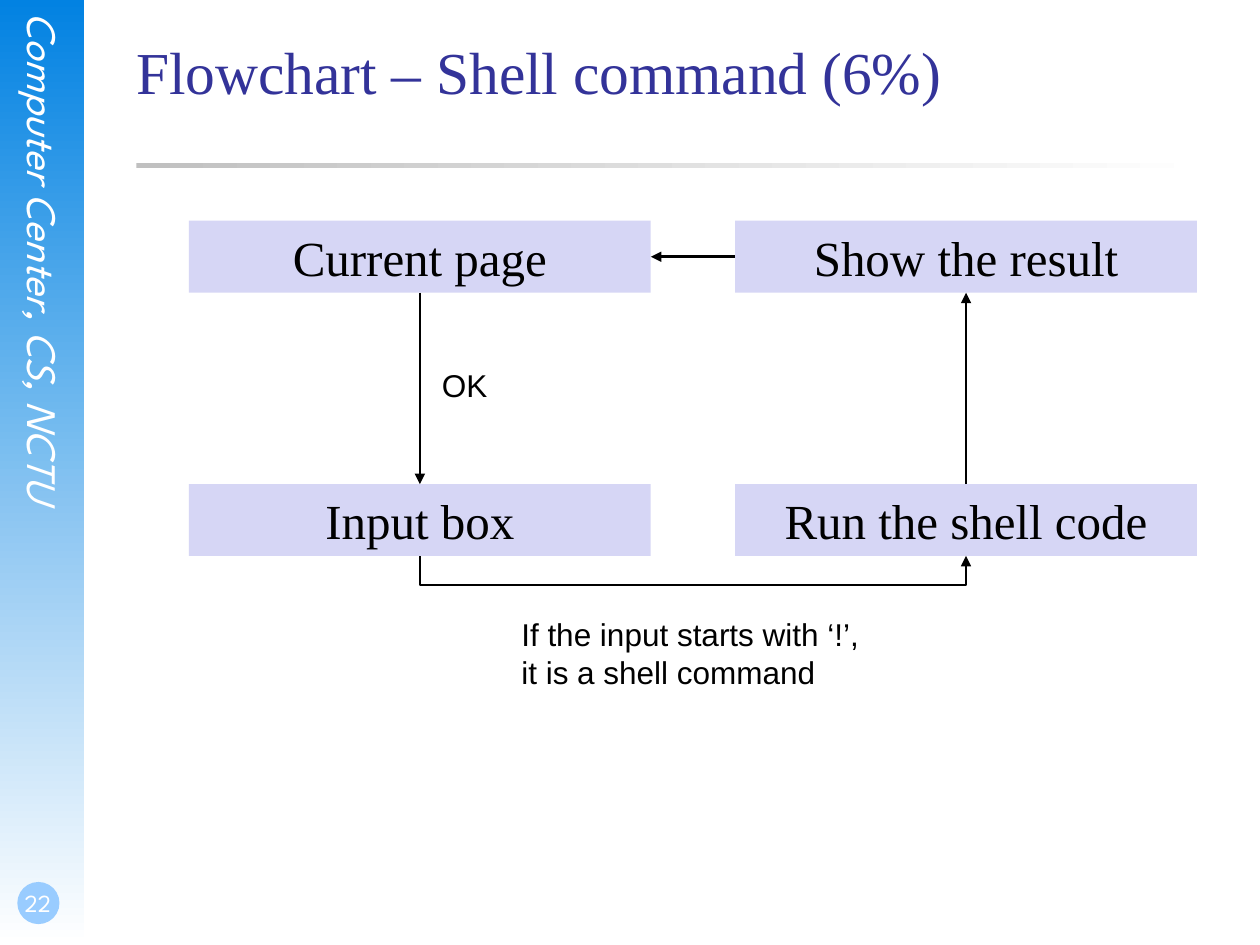
from lxml import etree
from pptx import Presentation
from pptx import util as u
from pptx.dml.color import RGBColor
from pptx.enum import shapes, text
from pptx.oxml.ns import qn

WHITE = RGBColor(0xFF, 0xFF, 0xFF)
BLACK = RGBColor(0, 0, 0)
BLUE = RGBColor(0x02, 0x82, 0xE2)
SKY = RGBColor(0x99, 0xCC, 0xFF)
GREY = RGBColor(0xC0, 0xC0, 0xC0)
NAVY = RGBColor(0x33, 0x33, 0x99)
LILAC = RGBColor(0xD6, 0xD6, 0xF5)

SERIF, SANS, SIDE = "Times New Roman", "Arial", "League Spartan"
COLUMNS = (3.81, 14.82)
ROWS = (4.45, 9.76)
BOX_W, BOX_H = 9.31, 1.45
TOP, LEFT, BOTTOM, RIGHT = range(4)  # connection sites of a rectangle


def cm(*lengths):
    return [u.Cm(n) for n in lengths]


def write(tf, words, size, font, color, align=text.PP_ALIGN.LEFT, italic=False):
    p = tf.paragraphs[0]
    p.alignment = align
    r = p.add_run()
    r.text = words
    r.font.size = u.Pt(size)
    r.font.name = font
    r.font.italic = italic
    r.font.color.rgb = color


def set_insets(tf, left=0, top=0, right=0, bottom=0):
    tf.margin_left, tf.margin_top, tf.margin_right, tf.margin_bottom = cm(
        left, top, right, bottom)


def add_plain(s, kind, at, color):
    sp = s.shapes.add_shape(kind, *cm(*at))
    sp.shadow.inherit = False
    sp.line.fill.background()
    sp.fill.solid()
    sp.fill.fore_color.rgb = color
    return sp


def add_gradient(s, at, color, angle):
    """Add a bar that fades from color to white."""
    sp = add_plain(s, shapes.MSO_SHAPE.RECTANGLE, at, color)
    sp.fill.gradient()
    sp.fill.gradient_angle = angle
    for stop, rgb, place in zip(sp.fill.gradient_stops, (color, WHITE), (0, 1)):
        stop.color.rgb = rgb
        stop.position = place


def add_label(s, at, words, size, font, color, wrap=True, **style):
    tf = s.shapes.add_textbox(*cm(*at)).text_frame
    tf.word_wrap = wrap
    write(tf, words, size, font, color, **style)
    return tf


def add_step(s, column, row, words):
    at = COLUMNS[column], ROWS[row], BOX_W, BOX_H
    sp = add_plain(s, shapes.MSO_SHAPE.RECTANGLE, at, LILAC)
    tf = sp.text_frame
    tf.vertical_anchor = text.MSO_ANCHOR.MIDDLE
    write(tf, words, 28, SERIF, BLACK, text.PP_ALIGN.CENTER)
    return sp


def add_arrow(s, start, start_site, end, end_site,
              kind=shapes.MSO_CONNECTOR.STRAIGHT):
    c = s.shapes.add_connector(kind, 0, 0, 0, 0)
    c.begin_connect(start, start_site)
    c.end_connect(end, end_site)
    c.line.color.rgb = BLACK
    c.line.width = u.Pt(1.5)
    etree.SubElement(c.line._get_or_add_ln(), qn("a:tailEnd"), type="triangle")
    etree.SubElement(c._element.spPr, qn("a:effectLst"))
    return c


def add_loop_below(s, start, end, drop):
    """Join two bottom edges by a turned elbow that dips by drop."""
    c = add_arrow(s, start, BOTTOM, end, BOTTOM, shapes.MSO_CONNECTOR.ELBOW)
    span, depth = end.left - start.left, 1588
    middle = start.left + start.width // 2 + span // 2
    c.left, c.top = middle - depth // 2, start.top + start.height - span // 2
    c.width, c.height = depth, span
    xfrm = c._element.spPr.find(qn("a:xfrm"))
    for name, value in (("rot", "5400000"), ("flipH", "1"), ("flipV", "1")):
        xfrm.set(name, value)
    guides = c._element.spPr.find(qn("a:prstGeom")).get_or_add_avLst()
    etree.SubElement(guides, qn("a:gd"), name="adj1",
                     fmla=f"val {-round(drop / depth * 100000)}")


def add_frame(s):
    add_gradient(s, (0, 0, 1.7, 19.05), BLUE, 270)
    tf = add_label(s, (0.38, 0.25, 1.02, 12.98), "Computer Center, CS, NCTU",
                   24, SIDE, WHITE, italic=True)
    set_insets(tf)
    tf._txBody.bodyPr.set("vert", "eaVert")
    add_plain(s, shapes.MSO_SHAPE.OVAL, (0.35, 17.78, 0.85, 0.85), SKY)
    tf = add_label(s, (0, 17.35, 1.48, 1.27), "22", 14, SIDE, WHITE,
                   align=text.PP_ALIGN.CENTER)
    set_insets(tf, left=0.05, bottom=0.13)
    tf.vertical_anchor = text.MSO_ANCHOR.BOTTOM
    add_gradient(s, (2.75, 3.28, 21.59, 0.1), GREY, 0)


def set_title(s, words):
    sp = s.shapes.title
    sp.left, sp.top, sp.width, sp.height = cm(2.75, 0.71, 21.59, 3.18)
    tf = sp.text_frame
    set_insets(tf)
    tf.vertical_anchor = text.MSO_ANCHOR.TOP
    write(tf, words, 34, SERIF, NAVY)


def main():
    prs = Presentation()
    prs.slide_width, prs.slide_height = cm(25.4, 19.05)
    s = prs.slides.add_slide(prs.slide_layouts[5])
    add_frame(s)
    set_title(s, "Flowchart – Shell command (6%)")

    page = add_step(s, 0, 0, "Current page")
    entry = add_step(s, 0, 1, "Input box")
    code = add_step(s, 1, 1, "Run the shell code")
    result = add_step(s, 1, 0, "Show the result")

    add_arrow(s, page, BOTTOM, entry, TOP)
    add_loop_below(s, entry, code, u.Cm(0.64))
    add_arrow(s, code, TOP, result, BOTTOM)
    add_arrow(s, result, LEFT, page, RIGHT)

    add_label(s, (8.66, 7.26, 1.45, 1.02), "OK", 18, SANS, BLACK, wrap=False)
    add_label(s, (10.26, 12.27, 7.42, 1.8),
              "If the input starts with ‘!’, it is a shell command",
              18, SANS, BLACK)
    prs.save("out.pptx")


if __name__ == "__main__":
    main()
